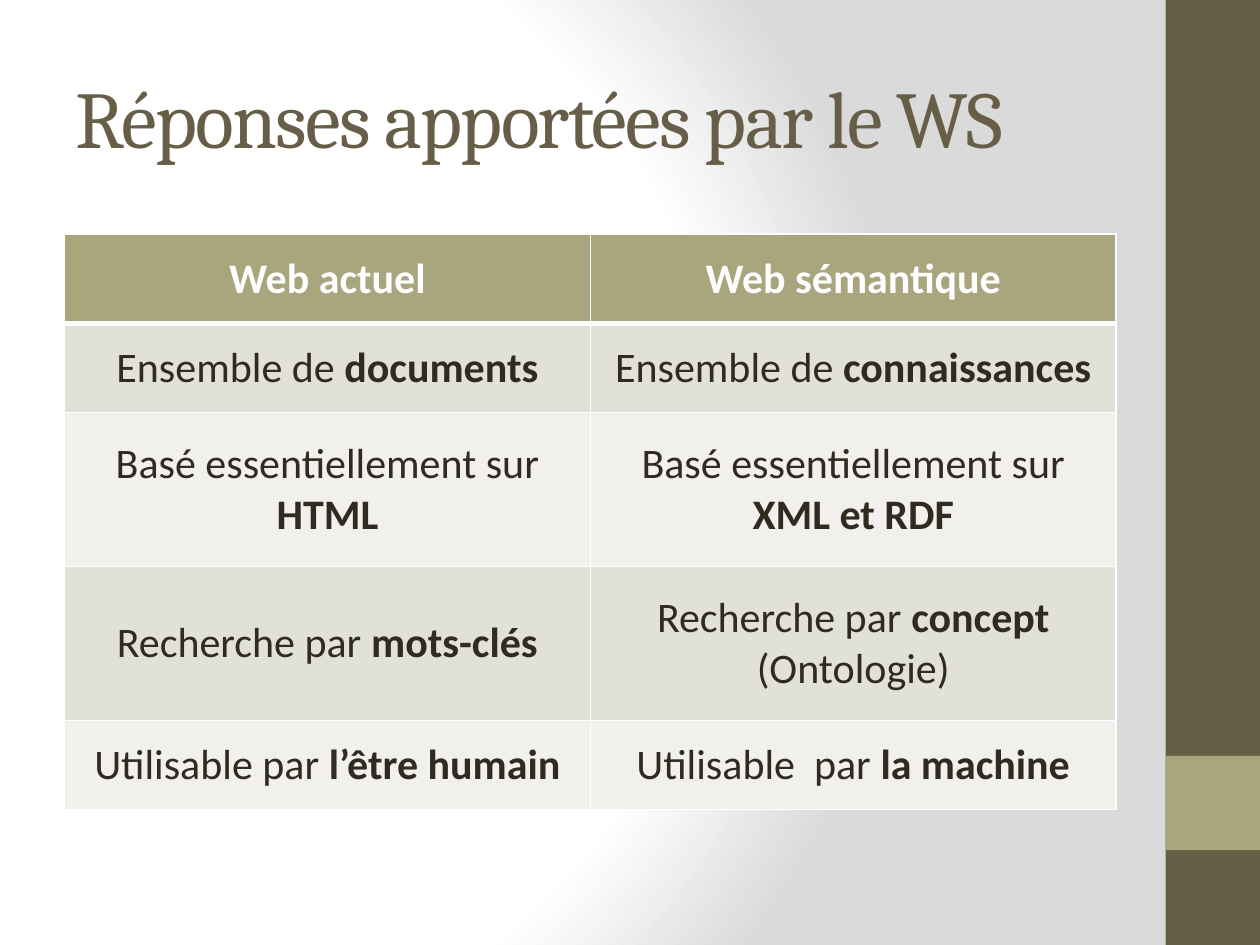
from dataclasses import dataclass

from lxml import etree
from pptx import Presentation
from pptx import util as u
from pptx.dml.color import RGBColor
from pptx.enum import shapes, text
from pptx.oxml import parse_xml
from pptx.oxml.ns import nsdecls, qn

BROWN = RGBColor(0x67, 0x5E, 0x47)
OLIVE = RGBColor(0xA9, 0xA5, 0x7C)
INK = RGBColor(0x2F, 0x2B, 0x20)
WHITE = RGBColor(0xFF, 0xFF, 0xFF)
GREY = RGBColor(0xDA, 0xDA, 0xDA)
BAND_DARK = RGBColor(0xE2, 0xE1, 0xD7)
BAND_LIGHT = RGBColor(0xF1, 0xF0, 0xEC)


@dataclass
class Bar:
    top: float
    height: float
    color: RGBColor


@dataclass
class Row:
    height: float
    current: str
    semantic: str


SIDE_BARS = [Bar(0, 19.05, BROWN), Bar(15.24, 1.9, OLIVE)]

# Text between double asterisks is bold
ROWS = [
    Row(1.8, "**Web actuel**", "**Web sémantique**"),
    Row(1.8, "Ensemble de **documents**", "Ensemble de **connaissances**"),
    Row(3.1, "Basé essentiellement sur **HTML**",
        "Basé essentiellement sur** XML et RDF**"),
    Row(3.1, "Recherche par **mots-clés**",
        "Recherche par **concept** (Ontologie)"),
    Row(1.8, "Utilisable par **l’être humain**",
        "Utilisable  par **la machine**"),
]


def write(p, content: str, *, size: float, color: RGBColor, font: str,
          align=text.PP_ALIGN.LEFT, spacing: int = 0) -> None:
    """Fill a paragraph; spacing is in hundredths of a point."""
    p.alignment = align
    for i, part in enumerate(content.split("**")):
        if not part:
            continue
        r = p.add_run()
        r.text = part
        r.font.name, r.font.size, r.font.bold = font, u.Pt(size), i % 2 == 1
        r.font.color.rgb = color
        if spacing:
            r.font._element.set("spc", str(spacing))


def set_background(s) -> None:
    s.background.fill.solid()
    bg = s.element.find(".//" + qn("p:bgPr"))
    stops = "".join(
        f'<a:gs pos="{pos * 1000}"><a:srgbClr val="{color}"/></a:gs>'
        for pos, color in ((0, WHITE), (75, WHITE), (100, GREY)))
    bg.replace(bg[0], parse_xml(
        f'<a:gradFill {nsdecls("a")} rotWithShape="1"><a:gsLst>{stops}</a:gsLst>'
        '<a:path path="circle"><a:fillToRect l="20000" t="50000" '
        'r="100000" b="50000"/></a:path></a:gradFill>'))


def add_bar(s, bar: Bar) -> None:
    sp = s.shapes.add_shape(shapes.MSO_SHAPE.RECTANGLE, u.Cm(23.5),
                            u.Cm(bar.top), u.Cm(1.9), u.Cm(bar.height))
    sp.shadow.inherit = False
    sp.fill.solid()
    sp.fill.fore_color.rgb = bar.color
    sp.line.fill.background()


def set_borders(cell, bottom: float) -> None:
    pr = cell._tc.get_or_add_tcPr()
    for i, (side, width) in enumerate(
            (("L", 1), ("R", 1), ("T", 1), ("B", bottom))):
        ln = etree.Element(qn(f"a:ln{side}"), w=str(u.Pt(width)))
        fill = etree.SubElement(ln, qn("a:solidFill"))
        etree.SubElement(fill, qn("a:srgbClr"), val=str(WHITE))
        pr.insert(i, ln)


def add_comparison(s, rows: list[Row]) -> None:
    frame = s.shapes.add_table(len(rows), 2, u.Cm(1.3), u.Cm(4.72), u.Cm(21.2),
                               u.Cm(sum(row.height for row in rows)))
    table = frame.table
    table.horz_banding = False
    for i, row in enumerate(rows):
        header = i == 0
        table.rows[i].height = u.Cm(row.height)
        for j, content in enumerate((row.current, row.semantic)):
            cell = table.cell(i, j)
            cell.vertical_anchor = text.MSO_ANCHOR.MIDDLE
            cell.fill.solid()
            cell.fill.fore_color.rgb = (
                OLIVE if header else BAND_DARK if i % 2 else BAND_LIGHT)
            set_borders(cell, bottom=3 if header else 1)
            if i == 1:  # the heavy rule is shared with the header
                cell._tc.tcPr.find(qn("a:lnT")).set("w", str(u.Pt(3)))
            write(cell.text_frame.paragraphs[0], content, size=24,
                  color=WHITE if header else INK, font="Calibri",
                  align=text.PP_ALIGN.CENTER)


def main() -> None:
    prs = Presentation()
    prs.slide_width, prs.slide_height = u.Cm(25.4), u.Cm(19.05)
    s = prs.slides.add_slide(prs.slide_layouts[5])

    # Background and side bars
    set_background(s)
    for bar in SIDE_BARS:
        add_bar(s, bar)

    # Title
    title = s.shapes.title
    title.left, title.top = u.Cm(1.27), u.Cm(0.76)
    title.width, title.height = u.Cm(21.16), u.Cm(3.18)
    tf = title.text_frame
    tf.vertical_anchor = text.MSO_ANCHOR.MIDDLE
    tf.auto_size = text.MSO_AUTO_SIZE.NONE
    write(tf.paragraphs[0], "Réponses apportées par le WS", size=46,
          color=BROWN, font="Cambria", spacing=-100)

    # Comparison table
    add_comparison(s, ROWS)
    prs.save("out.pptx")


if __name__ == "__main__":
    main()
